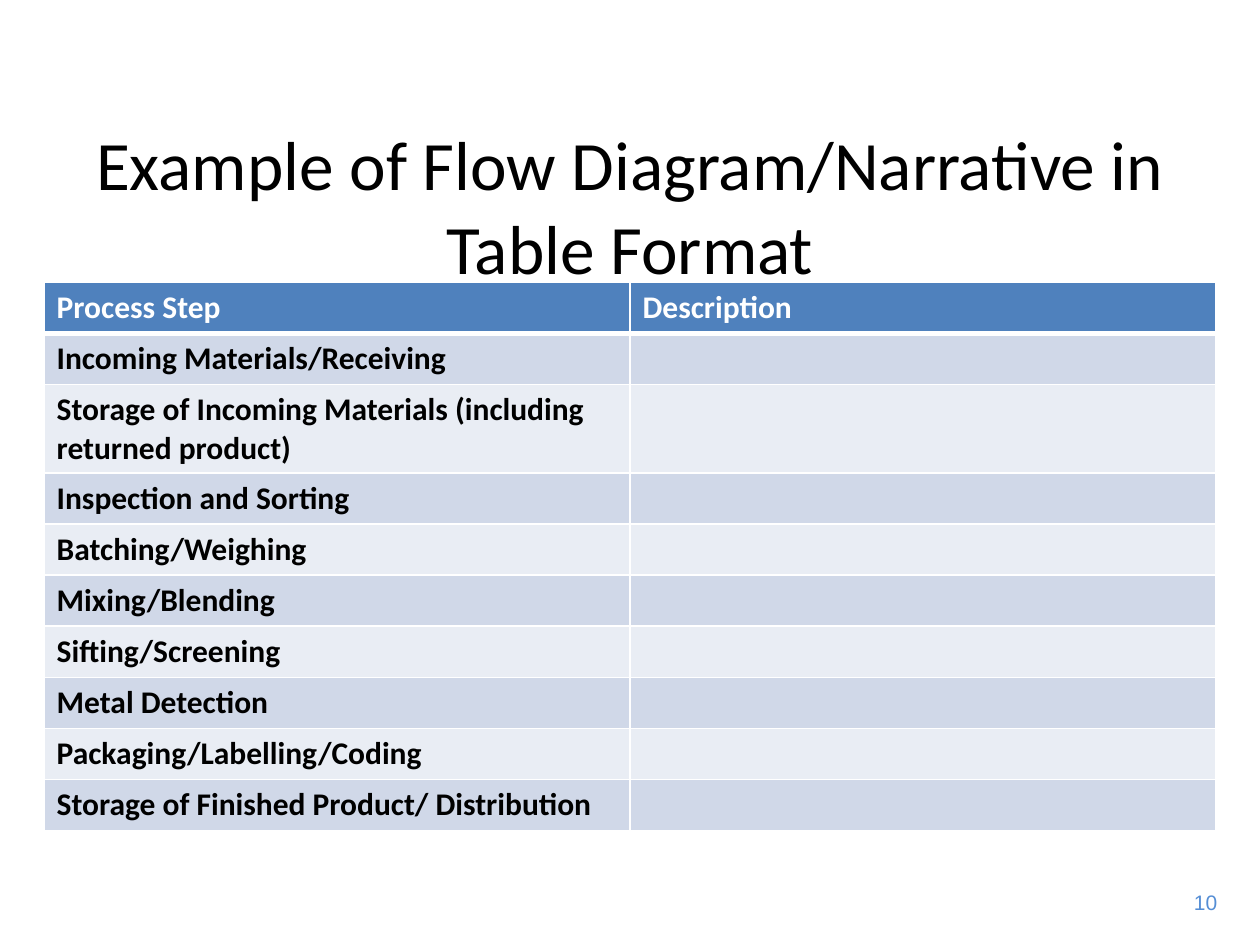
from dataclasses import dataclass

import pptx
import pptx.dml.color
import pptx.enum.text
import pptx.oxml
import pptx.oxml.ns
import pptx.slide
import pptx.table
import pptx.text.text
import pptx.util

Inches = pptx.util.Inches
Pt = pptx.util.Pt
RGBColor = pptx.dml.color.RGBColor
Align = pptx.enum.text.PP_ALIGN
Anchor = pptx.enum.text.MSO_ANCHOR

WHITE = RGBColor(0xFF, 0xFF, 0xFF)
BLACK = RGBColor(0x00, 0x00, 0x00)
HEADER_BLUE = RGBColor(0x4F, 0x81, 0xBD)
BAND_DARK = RGBColor(0xD0, 0xD8, 0xE8)
BAND_LIGHT = RGBColor(0xE9, 0xED, 0xF4)
NUMBER_BLUE = RGBColor(0x55, 0x8E, 0xD5)

MARGIN = 0.35
CONTENT_WIDTH = 9.3
PROCESS_STEPS = [
    "Incoming Materials/Receiving",
    "Storage of Incoming Materials (including returned product)",
    "Inspection and Sorting",
    "Batching/Weighing",
    "Mixing/Blending",
    "Sifting/Screening",
    "Metal Detection",
    "Packaging/Labelling/Coding",
    "Storage of Finished Product/ Distribution",
]


@dataclass(frozen=True)
class TextStyle:
    font: str
    size: float
    color: RGBColor
    bold: bool = False


@dataclass(frozen=True)
class Label:
    text: str
    left: float
    top: float
    width: float
    height: float
    style: TextStyle
    align: Align
    anchor: Anchor
    wrap: bool


@dataclass(frozen=True)
class StepRow:
    texts: tuple[str, str]
    fill: RGBColor
    style: TextStyle
    bottom_border: float = 1


def add_run(paragraph: pptx.text.text._Paragraph, text: str, style: TextStyle) -> None:
    run = paragraph.add_run()
    run.text = text
    run.font.name = style.font
    run.font.size = Pt(style.size)
    run.font.bold = style.bold
    run.font.color.rgb = style.color


def draw_label(slide: pptx.slide.Slide, label: Label) -> None:
    box = slide.shapes.add_textbox(
        Inches(label.left), Inches(label.top), Inches(label.width), Inches(label.height)
    )
    frame = box.text_frame
    frame.word_wrap = label.wrap
    frame.vertical_anchor = label.anchor
    frame.paragraphs[0].alignment = label.align
    add_run(frame.paragraphs[0], label.text, label.style)


def set_borders(cell: pptx.table._Cell, top: float, bottom: float) -> None:
    properties = cell._tc.get_or_add_tcPr()
    widths = {"lnL": 1, "lnR": 1, "lnT": top, "lnB": bottom}
    for position, (edge, width) in enumerate(widths.items()):
        border = pptx.oxml.parse_xml(
            f'<a:{edge} {pptx.oxml.ns.nsdecls("a")} w="{Pt(width)}">'
            f'<a:solidFill><a:srgbClr val="{WHITE}"/></a:solidFill></a:{edge}>'
        )
        properties.insert(position, border)


def draw_table(slide: pptx.slide.Slide, rows: list[StepRow]) -> None:
    table = slide.shapes.add_table(
        len(rows), 2, Inches(MARGIN), Inches(2.24), Inches(CONTENT_WIDTH), Inches(4.06)
    ).table
    top_border = 1
    for row_index, row in enumerate(rows):
        for column, text in enumerate(row.texts):
            cell = table.cell(row_index, column)
            cell.fill.solid()
            cell.fill.fore_color.rgb = row.fill
            set_borders(cell, top_border, row.bottom_border)
            if text:
                add_run(cell.text_frame.paragraphs[0], text, row.style)
        top_border = row.bottom_border


def main() -> None:
    presentation = pptx.Presentation()
    presentation.slide_width = Inches(10)
    presentation.slide_height = Inches(7.5)
    slide = presentation.slides.add_slide(presentation.slide_layouts[6])

    page_number = Label(
        "10", 9.35, 7.01, 0.41, 0.3, TextStyle("Arial", 12, NUMBER_BLUE),
        Align.RIGHT, Anchor.TOP, False,
    )
    title = Label(
        "Example of Flow Diagram/Narrative in Table Format",
        MARGIN, 1.12, CONTENT_WIDTH, 1.01, TextStyle("Calibri", 39.6, BLACK),
        Align.CENTER, Anchor.MIDDLE, True,
    )
    header_style = TextStyle("Calibri", 18, WHITE, True)
    step_style = TextStyle("Calibri", 18, BLACK, True)
    header = StepRow(("Process Step", "Description"), HEADER_BLUE, header_style, 3)
    steps = [
        StepRow((step, ""), BAND_LIGHT if index % 2 else BAND_DARK, step_style)
        for index, step in enumerate(PROCESS_STEPS)
    ]

    draw_label(slide, page_number)
    draw_table(slide, [header, *steps])
    draw_label(slide, title)
    presentation.save("out.pptx")


if __name__ == "__main__":
    main()
